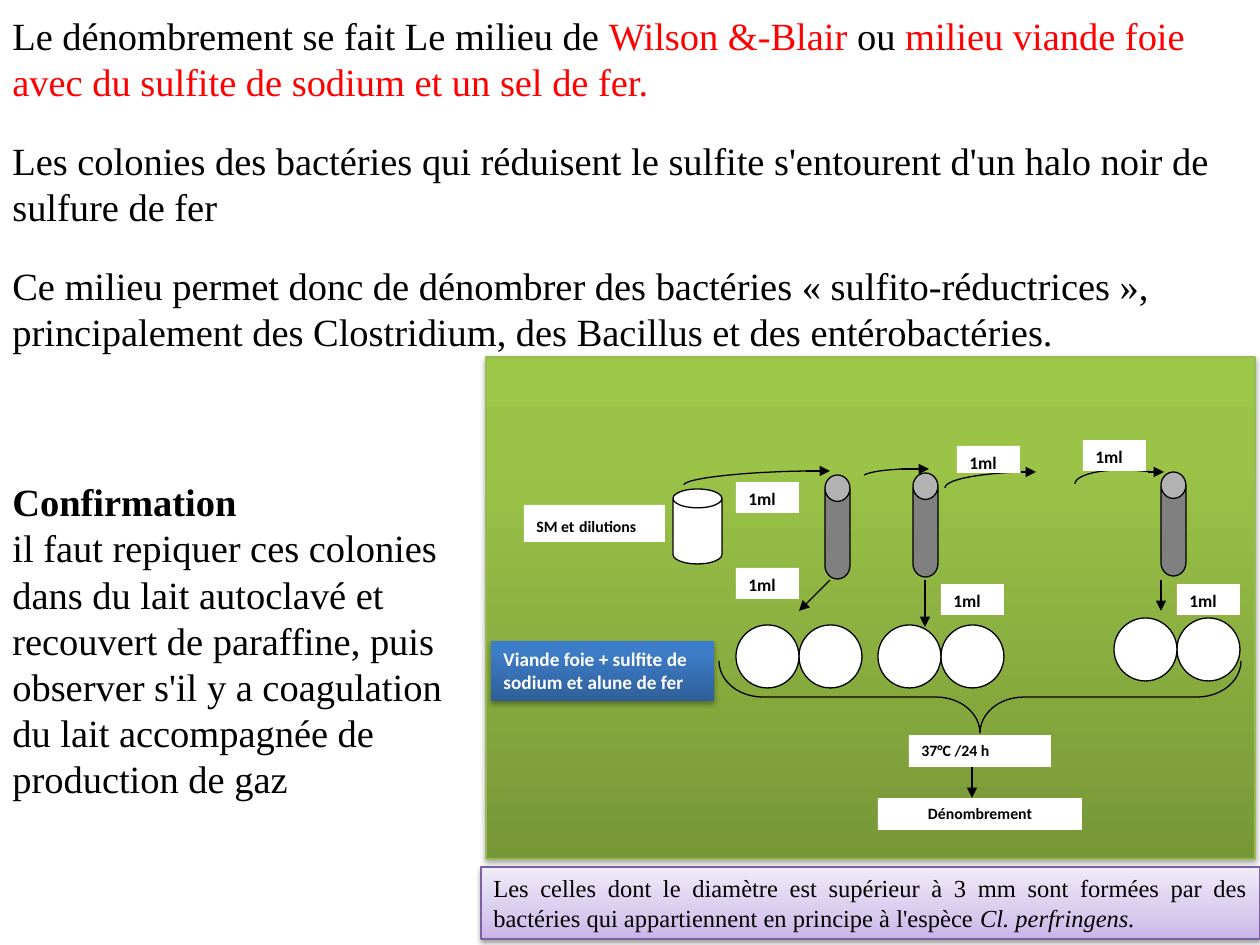
from lxml.etree import SubElement
from pptx import Presentation
from pptx.dml.color import RGBColor
from pptx.enum.shapes import MSO_CONNECTOR, MSO_SHAPE as SHAPE
from pptx.enum.text import MSO_ANCHOR, PP_ALIGN as ALIGN
from pptx.oxml.ns import qn
from pptx.util import Pt

PX = 914400 / 126
SERIF, SANS = "Times New Roman", "Calibri"
COLORS = {
    "black": "000000", "white": "FFFFFF", "red": "FF0000", "gray": "808080",
    "panel_line": "98B955", "caption_line": "7D60A0",
}
GREEN = [(0, "779737"), (80, "9BC348"), (100, "9DC746")]
BLUE = [(0, "2F5F99"), (80, "3D7CC7"), (100, "3A7CCB")]
LILAC = [(0, "C9B5E8"), (35, "D8CBEE"), (100, "F0EAF9")]


def px(n):
    return round(n * PX)


def rgb(name):
    return RGBColor.from_string(COLORS[name])


def set_line(line, color):
    line.color.rgb = rgb(color)
    line.width = Pt(0.75)


def set_gradient(sp, stops):
    """Fill a shape from bottom to top with (percent, hex) stops."""
    sp.fill.gradient()
    sp.fill.gradient_angle = 90
    gs_list = sp._element.spPr.find(qn("a:gradFill")).find(qn("a:gsLst"))
    for gs in list(gs_list):
        gs_list.remove(gs)
    for percent, color in stops:
        gs = SubElement(gs_list, qn("a:gs"), pos=str(percent * 1000))
        SubElement(gs, qn("a:srgbClr"), val=color)


def add_shadow(sp, alpha=35, distance=23000):
    effects = sp._element.spPr.find(qn("a:effectLst"))
    outer = SubElement(effects, qn("a:outerShdw"), blurRad="40000",
                       dist=str(distance), dir="5400000", rotWithShape="0")
    color = SubElement(outer, qn("a:srgbClr"), val=COLORS["black"])
    SubElement(color, qn("a:alpha"), val=str(alpha * 1000))


def add_shape(s, kind, box, fill=None, line=None):
    """Fill is a colour name, a list of gradient stops, or None."""
    sp = s.shapes.add_shape(kind, *map(px, box))
    sp.shadow.inherit = False
    if isinstance(fill, list):
        set_gradient(sp, fill)
    elif fill:
        sp.fill.solid()
        sp.fill.fore_color.rgb = rgb(fill)
    else:
        sp.fill.background()
    if line:
        set_line(sp.line, line)
    else:
        sp.line.fill.background()
    return sp


def add_run(p, text, size, font, color="black", bold=False, italic=False):
    r = p.add_run()
    r.text = text
    r.font.size = Pt(size)
    r.font.name = font
    r.font.color.rgb = rgb(color)
    r.font.bold = bold
    r.font.italic = italic


def start_text(sp, align=ALIGN.LEFT):
    tf = sp.text_frame
    tf.word_wrap = True
    tf.vertical_anchor = MSO_ANCHOR.TOP
    p = tf.paragraphs[0]
    p.alignment = align
    return p


def add_body(s, box, *paragraphs):
    """Each paragraph is a list of (text, colour, bold) runs."""
    sp = s.shapes.add_textbox(*map(px, box))
    p = start_text(sp)
    for i, runs in enumerate(paragraphs):
        if i:
            p = sp.text_frame.add_paragraph()
        for text, color, bold in runs:
            add_run(p, text, 22, SERIF, color, bold)


def add_label(s, box, text, size, align=ALIGN.LEFT):
    sp = add_shape(s, SHAPE.RECTANGLE, box, "white")
    add_run(start_text(sp, align), text, size, SANS, bold=True)


def add_arrow(s, x1, y1, x2, y2):
    c = s.shapes.add_connector(MSO_CONNECTOR.STRAIGHT, *map(px, (x1, y1, x2, y2)))
    set_line(c.line, "black")
    SubElement(c.line._get_or_add_ln(), qn("a:tailEnd"), type="triangle")
    SubElement(c._element.spPr, qn("a:effectLst"))


def bezier(a, b, c, d, steps=16):
    for i in range(1, steps + 1):
        t = i / steps
        u = 1 - t
        yield tuple(px(u**3 * k + 3 * u * u * t * m + 3 * u * t * t * n + t**3 * q)
                    for k, m, n, q in zip(a, b, c, d))


def add_curve(s, points):
    """Draw chained cubic curves: a start point, then three points for each."""
    builder = s.shapes.build_freeform(*map(px, points[0]))
    for i in range(0, len(points) - 1, 3):
        builder.add_line_segments(bezier(*points[i:i + 4]), close=False)
    sp = builder.convert_to_shape()
    sp.shadow.inherit = False
    sp.fill.background()
    set_line(sp.line, "black")


def add_diagram(s):
    panel = add_shape(s, SHAPE.RECTANGLE, (486, 357, 769, 502), GREEN, "panel_line")
    add_shadow(panel)

    brace = add_shape(s, SHAPE.LEFT_BRACE, (944, 436, 72, 522), line="black")
    brace.rotation = 270
    brace.adjustments[0] = 0.61

    flask = add_shape(s, SHAPE.CAN, (673, 489, 49, 75), "white", "black")
    flask.adjustments[0] = 0.385
    for x, y in ((1161, 472), (913, 473), (825, 475)):
        tube = add_shape(s, SHAPE.CAN, (x, y, 25, 104), "gray", "black")
        tube.adjustments[0] = 1.058

    for points in (
        [(808, 471), (737, 472), (684, 479), (684, 485)],
        [(902, 469), (887, 470), (873, 471), (864, 475)],
        [(1018, 472), (975, 474), (945, 480), (945, 488)],
        [(1152, 472), (1143, 471), (1133, 470), (1121, 470),
         (1096, 470), (1075, 476), (1075, 484)],
    ):
        add_curve(s, points)

    for x, y in ((736, 625), (878, 625), (1114, 618)):
        for left in (x + 63, x):
            add_shape(s, SHAPE.OVAL, (left, y, 63, 63), "white", "black")

    for ends in (
        (806, 471, 830, 471), (901, 469, 929, 469),
        (1021, 472, 1036, 472), (1148, 472, 1164, 472),
        (830, 580, 799, 611), (925, 580, 925, 627),
        (1161, 580, 1161, 611), (972, 767, 972, 798),
    ):
        add_arrow(s, *ends)

    dilutions = add_shape(s, SHAPE.RECTANGLE, (524, 505, 141, 37), "white")
    p = start_text(dilutions)
    add_run(p, "SM et", 9, SANS, bold=True)
    add_run(p, " ", 12, SANS)
    add_run(p, "dilutions", 9, SANS, bold=True)

    medium = add_shape(s, SHAPE.RECTANGLE, (491, 641, 223, 60), BLUE)
    add_shadow(medium)
    add_run(start_text(medium), "Viande foie + sulfite de sodium et alune de fer",
            11, SANS, "white", bold=True)

    add_label(s, (909, 735, 142, 32), "37°C /24 h", 9)
    add_label(s, (878, 798, 204, 32), "Dénombrement", 9, ALIGN.CENTER)
    for x, y, h in ((1083, 440, 31), (957, 446, 27), (736, 482, 31),
                    (1177, 584, 31), (941, 584, 31), (736, 568, 31)):
        add_label(s, (x, y, 63, h), "1ml", 10)


def add_caption(s):
    sp = add_shape(s, SHAPE.RECTANGLE, (481, 867, 779, 72), LILAC, "caption_line")
    add_shadow(sp, 38, 20000)
    p = start_text(sp, ALIGN.JUSTIFY)
    add_run(p, "Les celles dont le diamètre est supérieur à 3 mm sont formées par des "
            "bactéries qui appartiennent en principe à l'espèce ", 14, SERIF)
    add_run(p, "Cl. perfringens.", 14, SERIF, italic=True)


def main():
    prs = Presentation()
    prs.slide_width, prs.slide_height = px(1260), px(945)
    s = prs.slides.add_slide(prs.slide_layouts[6])
    add_body(s, (0, 6, 1260, 106), [
        ("Le dénombrement se fait Le milieu de ", "black", False),
        ("Wilson &-Blair ", "red", False),
        ("ou", "black", False),
        (" milieu viande foie avec du sulfite de sodium et un sel de fer.", "red", False)])
    add_body(s, (0, 131, 1260, 106), [
        ("Les colonies des bactéries qui réduisent le sulfite s'entourent d'un halo "
         "noir de sulfure de fer", "black", False)])
    add_body(s, (0, 256, 1260, 106), [
        ("Ce milieu permet donc de dénombrer des bactéries « sulfito-réductrices », "
         "principalement des Clostridium, des Bacillus et des entérobactéries.",
         "black", False)])
    add_body(s, (0, 472, 501, 339), [("Confirmation", "black", True)], [
        ("il faut repiquer ces colonies dans du lait autoclavé et recouvert de "
         "paraffine, puis observer s'il y a coagulation du lait accompagnée de "
         "production de gaz", "black", False)])
    add_diagram(s)
    add_caption(s)
    prs.save("out.pptx")


if __name__ == "__main__":
    main()
